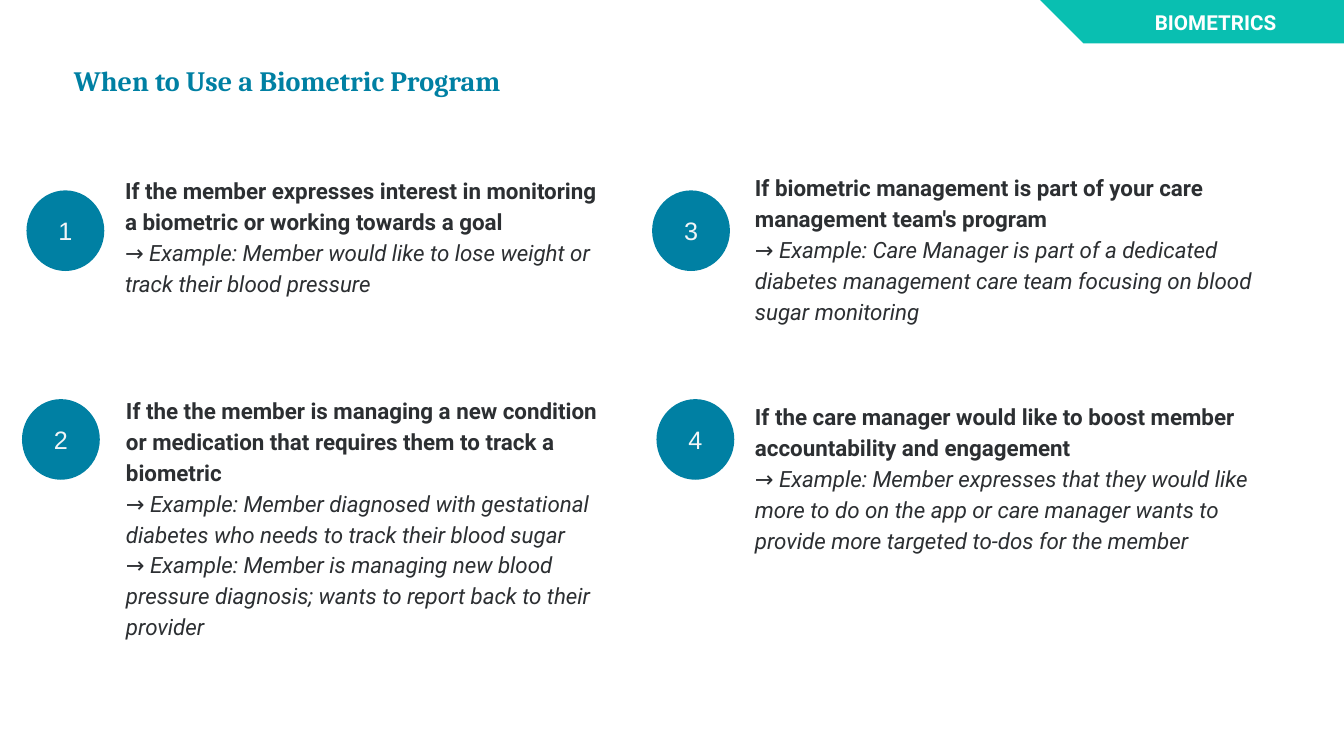
from pptx import Presentation
from pptx.dml.color import RGBColor
from pptx.enum.shapes import MSO_SHAPE
from pptx.enum.text import MSO_ANCHOR, PP_ALIGN
from pptx.util import Pt

OVAL = MSO_SHAPE.OVAL
TOP, MIDDLE = MSO_ANCHOR.TOP, MSO_ANCHOR.MIDDLE
LEFT, CENTER = PP_ALIGN.LEFT, PP_ALIGN.CENTER

CIRCLE_SIZE = (55.6, 57.6)
CASES = [
    ((18.9, 136), (85.7, 123.8, 354.2, 114.5),
     "If the member expresses interest in monitoring a biometric or working towards a goal",
     ["Member would like to lose weight or track their blood pressure"]),
    ((15.7, 285.1), (86.4, 280.8, 354.2, 85),
     "If the the member is managing a new condition or medication that requires them to track a biometric",
     ["Member diagnosed with gestational diabetes who needs to track their blood sugar",
      "Member is managing new blood pressure diagnosis; wants to report back to their provider"]),
    ((465.8, 136), (535.7, 121.7, 384.5, 117.4),
     "If biometric management is part of your care management team's program",
     ["Care Manager is part of a dedicated diabetes management care team focusing on blood sugar monitoring"]),
    ((468.9, 285.1), (535.7, 285.1, 384.5, 153.4),
     "If the care manager would like to boost member accountability and engagement",
     ["Member expresses that they would like more to do on the app or care manager wants to "
      "provide more targeted to-dos for the member"]),
]


def color(value):
    """Turn a hex string into a colour."""
    return RGBColor.from_string(value)


def write(paragraph, text, font="Roboto", size=16, fill="2C2F32", bold=False,
          italic=False, align=LEFT, spacing=1.0):
    """Put formatted text into a paragraph."""
    paragraph.alignment = align
    paragraph.line_spacing = spacing
    run = paragraph.add_run()
    run.text = text
    run.font.name = font
    run.font.size = Pt(size)
    run.font.bold = bold
    run.font.italic = italic
    run.font.color.rgb = color(fill)


class BiometricSlide:
    """Holds the style and the current slide."""

    blue = "0080A3"
    teal = "09BFB1"
    pale = "F2F5F7"
    white = "FFFFFF"
    spacing = 1.15

    def __init__(self, presentation):
        """Add a blank slide."""
        self.slide = presentation.slides.add_slide(presentation.slide_layouts[6])

    def frame(self, box, insets, anchor=TOP):
        """Add a wrapping text box and return its text frame."""
        frame = self.slide.shapes.add_textbox(*map(Pt, box)).text_frame
        frame.word_wrap = True
        frame.vertical_anchor = anchor
        (frame.margin_left, frame.margin_top,
         frame.margin_right, frame.margin_bottom) = map(Pt, insets)
        return frame

    def paint(self, shape, fill):
        """Give a shape a flat fill without outline or shadow."""
        shape.shadow.inherit = False
        shape.fill.solid()
        shape.fill.fore_color.rgb = color(fill)
        shape.line.fill.background()

    def title(self, text):
        """Add the slide title."""
        frame = self.frame((43.2, 36.7, 827.3, 48.2), (9.6, 4.8, 9.6, 4.8))
        write(frame.paragraphs[0], text, font="Cambria", size=20, fill=self.blue,
              bold=True, spacing=self.spacing)

    def banner(self, text):
        """Add the slanted corner banner with its label."""
        builder = self.slide.shapes.build_freeform(Pt(743), 0)
        corners = [(774, 31), (960, 31), (960, 0)]
        builder.add_line_segments([(Pt(x), Pt(y)) for x, y in corners])
        self.paint(builder.convert_to_shape(), self.teal)
        frame = self.frame((776.9, 1.4, 182.9, 28.8), (9.6,) * 4, MIDDLE)
        write(frame.paragraphs[0], text, size=14.7, fill=self.white, bold=True, align=CENTER)

    def circle(self, position, number):
        """Add a numbered circle."""
        shape = self.slide.shapes.add_shape(OVAL, *map(Pt, position + CIRCLE_SIZE))
        self.paint(shape, self.blue)
        shape.text_frame.vertical_anchor = MIDDLE
        write(shape.text_frame.paragraphs[0], str(number), font="Arial", size=18,
              fill=self.pale, align=CENTER)

    def case(self, box, heading, examples):
        """Add a bold heading followed by its italic examples."""
        frame = self.frame(box, (3.6, 0, 3.6, 3.6))
        write(frame.paragraphs[0], heading, bold=True, spacing=self.spacing)
        for example in examples:
            write(frame.add_paragraph(), f"→ Example: {example}", italic=True,
                  spacing=self.spacing)


def main():
    """Build and save the presentation."""
    presentation = Presentation()
    presentation.slide_width, presentation.slide_height = Pt(960), Pt(540)
    slide = BiometricSlide(presentation)
    slide.title("When to Use a Biometric Program")
    for number, (position, box, heading, examples) in enumerate(CASES, 1):
        slide.circle(position, number)
        slide.case(box, heading, examples)
    slide.banner("BIOMETRICS")
    presentation.save("out.pptx")


if __name__ == "__main__":
    main()
